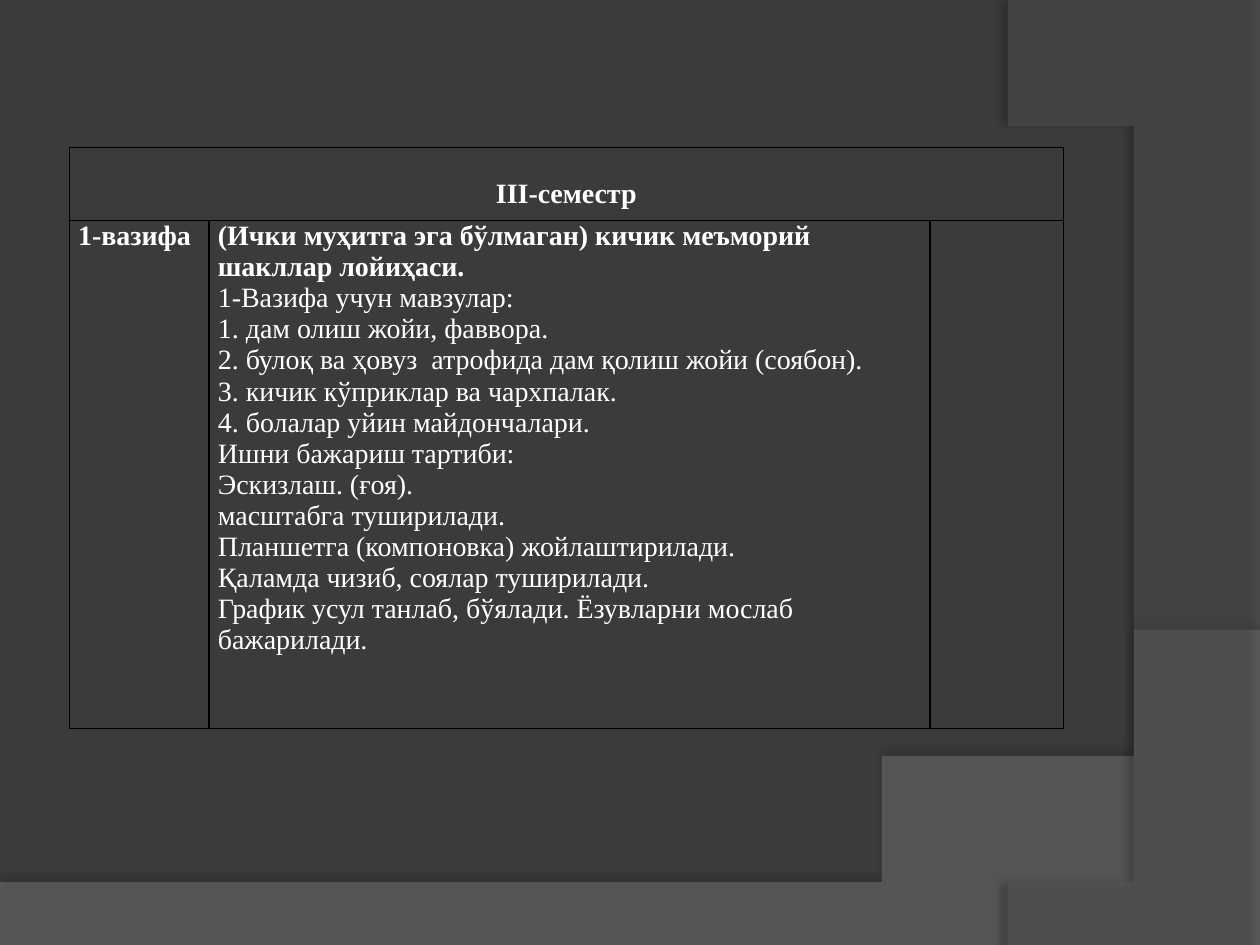
"""Build a dark slide with curved background bands and a semester task table."""
from lxml import etree
from pptx import Presentation
from pptx.dml.color import RGBColor
from pptx.enum.text import PP_ALIGN
from pptx.oxml.ns import qn
from pptx.util import Inches, Pt

CENTER, LEFT = PP_ALIGN.CENTER, PP_ALIGN.LEFT
WIDTH, HEIGHT = 10, 7.5
DARK = RGBColor(0x3B, 0x3B, 0x3B)
LOWER_GREY = RGBColor(0x7F, 0x7F, 0x7F)
RIGHT_GREY = RGBColor(0x5E, 0x5E, 0x5E)
WHITE = RGBColor(0xFF, 0xFF, 0xFF)
BLACK = RGBColor(0, 0, 0)
FONT = "Times New Roman"

BANDS = [
    {"corners": [(0, 7.05), (0, HEIGHT), (WIDTH, HEIGHT), (WIDTH, 5.2)],
     "curve": [(5.59, 7.29), (3.91, 7.19), (0, 7.05)],
     "color": LOWER_GREY, "opacity": 45,
     "shadow": {"opacity": 35, "blur": 4, "distance": 3.5, "angle": 270}},
    {"corners": [(WIDTH, 0.02), (WIDTH, HEIGHT), (8.21, HEIGHT)],
     "curve": [(9.35, 6.19), (10.18, 3), (8, 0)],
     "color": RIGHT_GREY, "opacity": 40,
     "shadow": {"opacity": 45, "blur": 4, "distance": 4, "angle": 180}},
]

TABLE_LEFT, TABLE_TOP = 0.55, 1.17
COLUMNS = [1.11, 5.72, 1.06]
ROWS = [0.58, 4.03]
HEADING = "III-семестр"
TASK = "1-вазифа"
TASK_TITLE = "(Ички муҳитга эга бўлмаган) кичик меъморий шакллар лойиҳаси."
TASK_LINES = [
    "1-Вазифа учун мавзулар:",
    "1. дам олиш жойи, фаввора.",
    "2. булоқ ва ҳовуз  атрофида дам қолиш жойи (соябон).",
    "3. кичик кўприклар ва чархпалак.",
    "4. болалар уйин майдончалари.",
    "Ишни бажариш тартиби:",
    "Эскизлаш. (ғоя).",
    "масштабга туширилади.",
    "Планшетга (компоновка) жойлаштирилади.",
    "Қаламда чизиб, соялар туширилади.",
    "График усул танлаб, бўялади. Ёзувларни мослаб бажарилади.",
]


def add_element(parent, tag, **attributes):
    values = {name: str(value) for name, value in attributes.items()}
    return etree.SubElement(parent, qn(tag), values)


def add_color(parent, color, opacity):
    node = add_element(parent, "a:srgbClr", val=color)
    add_element(node, "a:alpha", val=opacity * 1000)


def curve_points(start, first, second, end, steps=60):
    points = []
    for step in range(1, steps + 1):
        t = step / steps
        weights = ((1 - t) ** 3, 3 * t * (1 - t) ** 2, 3 * t * t * (1 - t), t ** 3)
        points.append(tuple(sum(w * p[axis] for w, p in zip(weights, (start, first, second, end)))
                            for axis in (0, 1)))
    return points


def add_band(page, corners, curve, color, opacity, shadow):
    builder = page.shapes.build_freeform(*corners[0], scale=Inches(1))
    builder.add_line_segments(corners[1:] + curve_points(corners[-1], *curve), close=True)
    band = builder.convert_to_shape()
    band.shadow.inherit = False
    band.line.fill.background()
    band.fill.solid()
    band.fill.fore_color.rgb = color
    tint = band.element.spPr.find(qn("a:solidFill")).find(qn("a:srgbClr"))
    add_element(tint, "a:alpha", val=opacity * 1000)
    effects = band.element.spPr.find(qn("a:effectLst"))
    outer = add_element(effects, "a:outerShdw", blurRad=Pt(shadow["blur"]),
                        dist=Pt(shadow["distance"]), dir=shadow["angle"] * 60000,
                        algn="ctr", rotWithShape=0)
    add_color(outer, BLACK, shadow["opacity"])


def add_text(cell, lines, bold_lines=1, align=LEFT, spacing=1.0, size=16):
    for index, line in enumerate(lines):
        frame = cell.text_frame
        para = frame.add_paragraph() if index else frame.paragraphs[0]
        para.alignment, para.line_spacing = align, spacing
        span = para.add_run()
        span.text = line
        span.font.name, span.font.size = FONT, Pt(size)
        span.font.bold = index < bold_lines
        span.font.color.rgb = WHITE


def style_cell(cell):
    cell.margin_left = cell.margin_right = Inches(0.07)
    cell.margin_top = cell.margin_bottom = 0
    properties = cell._tc.get_or_add_tcPr()
    for side in ("a:lnL", "a:lnR", "a:lnT", "a:lnB"):
        border = add_element(properties, side, w=Pt(1))
        add_color(add_element(border, "a:solidFill"), BLACK, 100)
    cell.fill.background()


def add_task_table(page):
    frame = page.shapes.add_table(len(ROWS), len(COLUMNS), Inches(TABLE_LEFT), Inches(TABLE_TOP),
                                  Inches(sum(COLUMNS)), Inches(sum(ROWS)))
    table = frame.table
    table.first_row = table.horz_banding = False
    for column, width in zip(table.columns, COLUMNS):
        column.width = Inches(width)
    for row, height in zip(table.rows, ROWS):
        row.height = Inches(height)
    for cell in table.iter_cells():
        style_cell(cell)
    table.cell(0, 0).merge(table.cell(0, len(COLUMNS) - 1))
    add_text(table.cell(0, 0), [HEADING], align=CENTER, spacing=2.0)
    add_text(table.cell(1, 0), [TASK])
    add_text(table.cell(1, 1), [TASK_TITLE] + TASK_LINES)


def main():
    deck = Presentation()
    deck.slide_width, deck.slide_height = Inches(WIDTH), Inches(HEIGHT)
    page = deck.slides.add_slide(deck.slide_layouts[6])
    page.background.fill.solid()
    page.background.fill.fore_color.rgb = DARK
    for band in BANDS:
        add_band(page, **band)
    add_task_table(page)
    deck.save("out.pptx")


if __name__ == "__main__":
    main()
